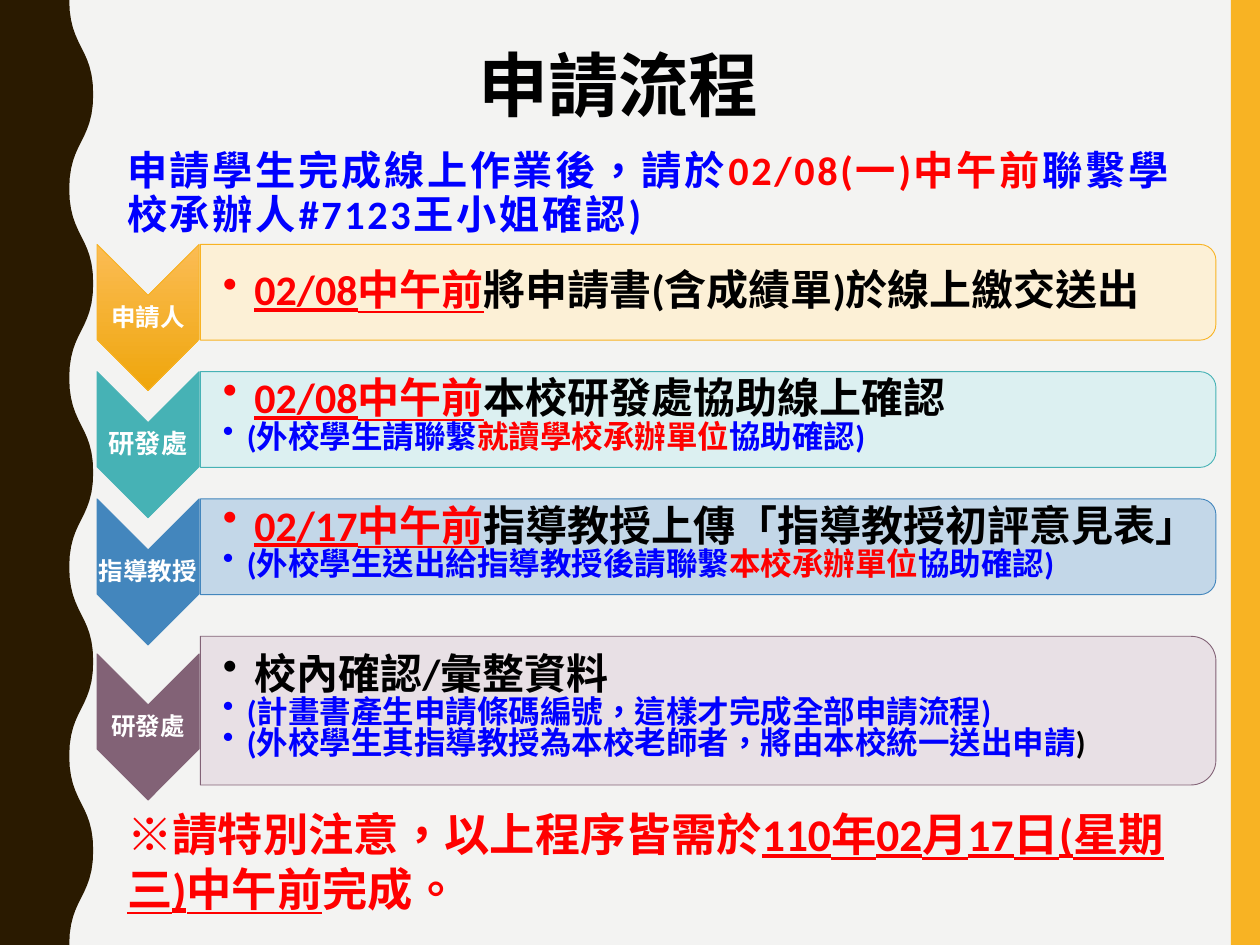
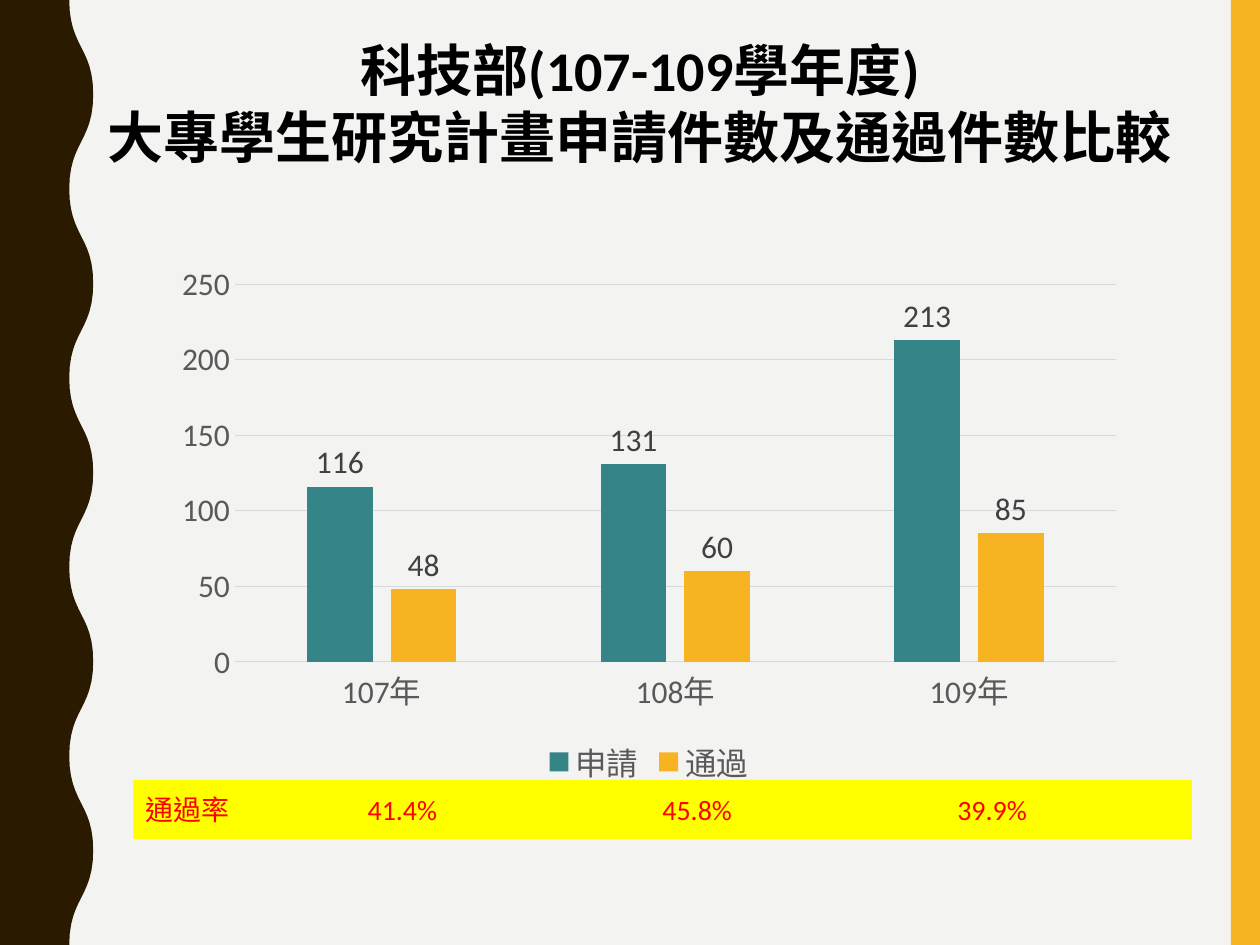
from collections import namedtuple
from lxml import etree
from pptx import Presentation
from pptx.chart.data import CategoryChartData
from pptx.dml.color import RGBColor
from pptx.enum.chart import XL_CHART_TYPE, XL_LABEL_POSITION, XL_LEGEND_POSITION, XL_TICK_MARK
from pptx.enum.lang import MSO_LANGUAGE_ID
from pptx.enum.shapes import MSO_SHAPE
from pptx.enum.text import MSO_ANCHOR, PP_ALIGN
from pptx.oxml.ns import qn
from pptx.util import Inches, Pt

RECT, CHEVRON, ROUND = MSO_SHAPE.RECTANGLE, MSO_SHAPE.CHEVRON, MSO_SHAPE.ROUND_2_SAME_RECTANGLE
COLUMN, OUTSIDE = XL_CHART_TYPE.COLUMN_CLUSTERED, XL_LABEL_POSITION.OUTSIDE_END
BOTTOM, NO_TICK = XL_LEGEND_POSITION.BOTTOM, XL_TICK_MARK.NONE
TOP, MIDDLE, LOW = MSO_ANCHOR.TOP, MSO_ANCHOR.MIDDLE, MSO_ANCHOR.BOTTOM
LEFT, CENTER = PP_ALIGN.LEFT, PP_ALIGN.CENTER
TAIWAN = MSO_LANGUAGE_ID.TAIWAN if hasattr(MSO_LANGUAGE_ID, "TAIWAN") else MSO_LANGUAGE_ID.TRADITIONAL_CHINESE

Theme = namedtuple("Theme", "font asian paper bark gold teal yellow red blue black white gray dark grid "
                   "head title note lead main sub axis rate")
T = Theme("Calibri", "Noto Sans CJK SC", "F3F3F2", "2A1A00", "F8B323", "358588", "FFFF00",
          "FF0000", "0000FF", "000000", "FFFFFF", "595959", "404040", "D9D9D9",
          40, 32, 25.9, 23, 24, 18, 18, 16)
Run = namedtuple("Run", "text color line", defaults=[T.black, False])
Step = namedtuple("Step", "label size dark light top high drop lines")
WIDE, HIGH = 10, 7.5
BODY = (0.91, 8.82)

LEAD = [Run("申請學生完成線上作業後，請於", T.blue), Run("02/08(一)中午前", T.red),
        Run("聯繫學校承辦人#7123王小姐確認)", T.blue)]
NOTE = [Run("※請特別注意，以上程序皆需於", T.red),
        Run("110年02月17日(星期三)中午前", T.red, True), Run("完成。", T.red)]
START, PITCH = 1.94, 1.01
STEPS = [
    Step("申請人", 14, T.gold, "FEF0D3", START, 0.76, 0, [
        [Run("02/08中午前", T.red, True), Run("將申請書(含成績單)於線上繳交送出")]]),
    Step("研發處", 15, "46B2B5", "DAF0F1", START + PITCH, 0.76, 0, [
        [Run("02/08中午前", T.red, True), Run("本校研發處協助線上確認")],
        [Run("(外校學生請聯繫", T.blue), Run("就讀學校承辦單位", T.red), Run("協助確認)", T.blue)]]),
    Step("指導教授", 14, "4386BD", "BED5E8", START + 2 * PITCH, 0.76, 0, [
        [Run("02/17中午前", T.red, True), Run("指導教授上傳「指導教授初評意見表」")],
        [Run("(外校學生送出給指導教授後請聯繫", T.blue), Run("本校承辦單位", T.red),
         Run("協助確認)", T.blue)]]),
    Step("研發處", 14, "826276", "E7DFE4", 5.05, 1.18, 0.14, [
        [Run("校內確認/彙整資料")],
        [Run("(計畫書產生申請條碼編號，這樣才完成全部申請流程)", T.blue)],
        [Run("(外校學生其指導教授為本校老師者，將由本校統一送出申請", T.blue), Run(")")]]),
]
TITLE = ["科技部(107-109學年度)", "大專學生研究計畫申請件數及通過件數比較"]
YEARS = ["107年", "108年", "109年"]
COUNTS = [("申請", (116, 131, 213), T.teal), ("通過", (48, 60, 85), T.gold)]
RATES = ["通過率", "41.4%", "45.8%", "39.9%"]


def rgb(code):
    return RGBColor.from_string(code)


def paint(shape, fill, line=None):
    shape.shadow.inherit = False
    shape.fill.solid()
    shape.fill.fore_color.rgb = rgb(fill)
    if line:
        shape.line.color.rgb = rgb(line)
        shape.line.width = Pt(0.5)
    else:
        shape.line.fill.background()


def block(slide, kind, x, y, w, h, fill, line=None, turn=0):
    if turn:
        x, y, w, h = x + (w - h) / 2, y + (h - w) / 2, h, w
    shape = slide.shapes.add_shape(kind, Inches(x), Inches(y), Inches(w), Inches(h))
    shape.rotation = turn
    paint(shape, fill, line)
    return shape


def frame(shape, anchor=TOP, pads=(0.1, 0.05, 0.1, 0.05), wrap=True):
    text = shape.text_frame
    text.word_wrap, text.vertical_anchor = wrap, anchor
    text.margin_left, text.margin_top, text.margin_right, text.margin_bottom = map(Inches, pads)
    return text


def box(slide, x, y, w, h, **look):
    return frame(slide.shapes.add_textbox(Inches(x), Inches(y), Inches(w), Inches(h)), **look)


def write(text, lines, size, bold=True, align=LEFT, space=1.0, track=0):
    for i, runs in enumerate(lines):
        para = text.paragraphs[0] if i == 0 else text.add_paragraph()
        para.alignment, para.line_spacing = align, space
        for item in runs:
            run = para.add_run()
            run.text = item.text
            font = run.font
            font.name, font.bold, font.underline = T.font, bold, item.line
            font.size, font.color.rgb, font.language_id = Pt(size), rgb(item.color), TAIWAN
            props = font._element
            if track:
                props.set("spc", str(track))
            props.find(qn("a:latin")).addnext(etree.Element(qn("a:ea"), typeface=T.asian))


def bullet(para, size, indent):
    para.space_after = Pt(0.15 * size)
    for run in para.runs:
        run.font.size = Pt(size)
    props = para._p.get_or_add_pPr()
    props.set("marL", str(Inches(indent)))
    props.set("indent", str(-Inches(indent)))
    etree.SubElement(props, qn("a:buChar"), char="•")


def wave():
    half, near, far = HIGH / 10, 0.55, 0.74
    for i in range(10):
        a, b = (near, far) if i % 2 == 0 else (far, near)
        for k in range(1, 13):
            t = k / 12
            yield a + (b - a) * t * t * (3 - 2 * t), half * (i + 1.5 * t * (1 - t) + t ** 3)


def page(deck):
    slide = deck.slides.add_slide(deck.slide_layouts[6])
    slide.background.fill.solid()
    slide.background.fill.fore_color.rgb = rgb(T.paper)
    block(slide, RECT, 9.77, 0, 0.23, HIGH, T.gold)
    edge = slide.shapes.build_freeform(0, 0)
    points = [(0.55, 0), *wave(), (0, HIGH)]
    edge.add_line_segments([(Inches(x), Inches(y)) for x, y in points], close=True)
    paint(edge.convert_to_shape(), T.bark)
    return slide


def draw(slide, step):
    left, wide, tall, side = 0.77, 0.81, 1.16, 1.59
    top = step.top + step.drop
    arrow = block(slide, CHEVRON, left, top, wide, tall, step.dark, step.dark, 90)
    if step.dark == T.gold:
        arrow.fill.gradient()
        arrow.fill.gradient_angle = 0
        for stop, code in zip(arrow.fill.gradient_stops, ("FBBC54", "EFA60C")):
            stop.color.rgb = rgb(code)
    label = box(slide, left, top + 0.41, wide, 0.35, anchor=MIDDLE, pads=(0.01,) * 4)
    write(label, [[Run(step.label, T.white)]], step.size, align=CENTER, space=0.9)
    panel = block(slide, ROUND, side, step.top, 8.06, step.high, step.light, step.dark, 90)
    tint = panel.fill._xPr.find(qn("a:solidFill"))[0]
    etree.SubElement(tint, qn("a:alpha"), val="90000")
    text = box(slide, side, step.top + 0.04, 8.06, step.high - 0.08, anchor=MIDDLE,
               pads=(0.18, 0.02, 0, 0.02))
    write(text, step.lines, T.main, space=0.9 if len(step.lines) == 1 else 0.7)
    for i, para in enumerate(text.paragraphs):
        bullet(para, *((T.sub, 0.19) if i else (T.main, 0.25)))


def flow(deck):
    slide = page(deck)
    x, w = BODY
    write(box(slide, x, 1.15, w, 0.51), [LEAD], T.lead, space=0.9, track=150)
    write(box(slide, x, 6.35, w, 0.99), [NOTE], T.note)
    for step in STEPS:
        draw(slide, step)
    write(box(slide, 3.7, 0.28, 2.45, 0.77, wrap=False), [[Run("申請流程")]], T.head)


def style(font, color, name=T.font):
    font.size, font.name, font.color.rgb = Pt(T.axis), name, rgb(color)


def plot(slide):
    data = CategoryChartData()
    data.categories = YEARS
    for name, counts, _ in COUNTS:
        data.add_series(name, counts)
    chart = slide.shapes.add_chart(COLUMN, Inches(1.29), Inches(2.02), Inches(7.72), Inches(4.26), data).chart
    style(chart.font, T.black)
    chart.has_title = False
    chart.has_legend = True
    chart.legend.position, chart.legend.include_in_layout = BOTTOM, False
    style(chart.legend.font, T.gray, T.asian)
    for axis in (chart.category_axis, chart.value_axis):
        axis.major_tick_mark = axis.minor_tick_mark = NO_TICK
        style(axis.tick_labels.font, T.gray)
    rule = chart.value_axis.major_gridlines.format.line
    for line in (chart.category_axis.format.line, rule):
        line.color.rgb, line.width = rgb(T.grid), Pt(0.75)
    chart.value_axis.format.line.fill.background()
    bars = chart.plots[0]
    bars.gap_width, bars.overlap, bars.vary_by_categories = 219, -27, False
    for series, (_, _, color) in zip(bars.series, COUNTS):
        series.format.fill.solid()
        series.format.fill.fore_color.rgb = rgb(color)
        labels = series.data_labels
        labels.show_value, labels.position = True, OUTSIDE
        style(labels.font, T.dark)


def compare(deck):
    slide = page(deck)
    head = box(slide, 0.67, 0.44, BODY[1], 0.91, anchor=LOW, pads=(0, 0.05, 0, 0))
    write(head, [[Run(line)] for line in TITLE], T.title, align=CENTER)
    band = block(slide, RECT, 1.06, 6.19, 8.4, 0.47, T.yellow)
    text = frame(band, anchor=MIDDLE)
    write(text, [[Run("\t".join(RATES), T.red)]], T.rate, bold=False)
    tabs = etree.SubElement(text.paragraphs[0]._p.get_or_add_pPr(), qn("a:tabLst"))
    for i in range(len(YEARS)):
        etree.SubElement(tabs, qn("a:tab"), pos=str(Inches(1.76 + 2.34 * i)), algn="l")
    plot(slide)


def main():
    deck = Presentation()
    deck.slide_width, deck.slide_height = Inches(WIDE), Inches(HIGH)
    flow(deck)
    compare(deck)
    deck.save("out.pptx")


if __name__ == "__main__":
    main()
